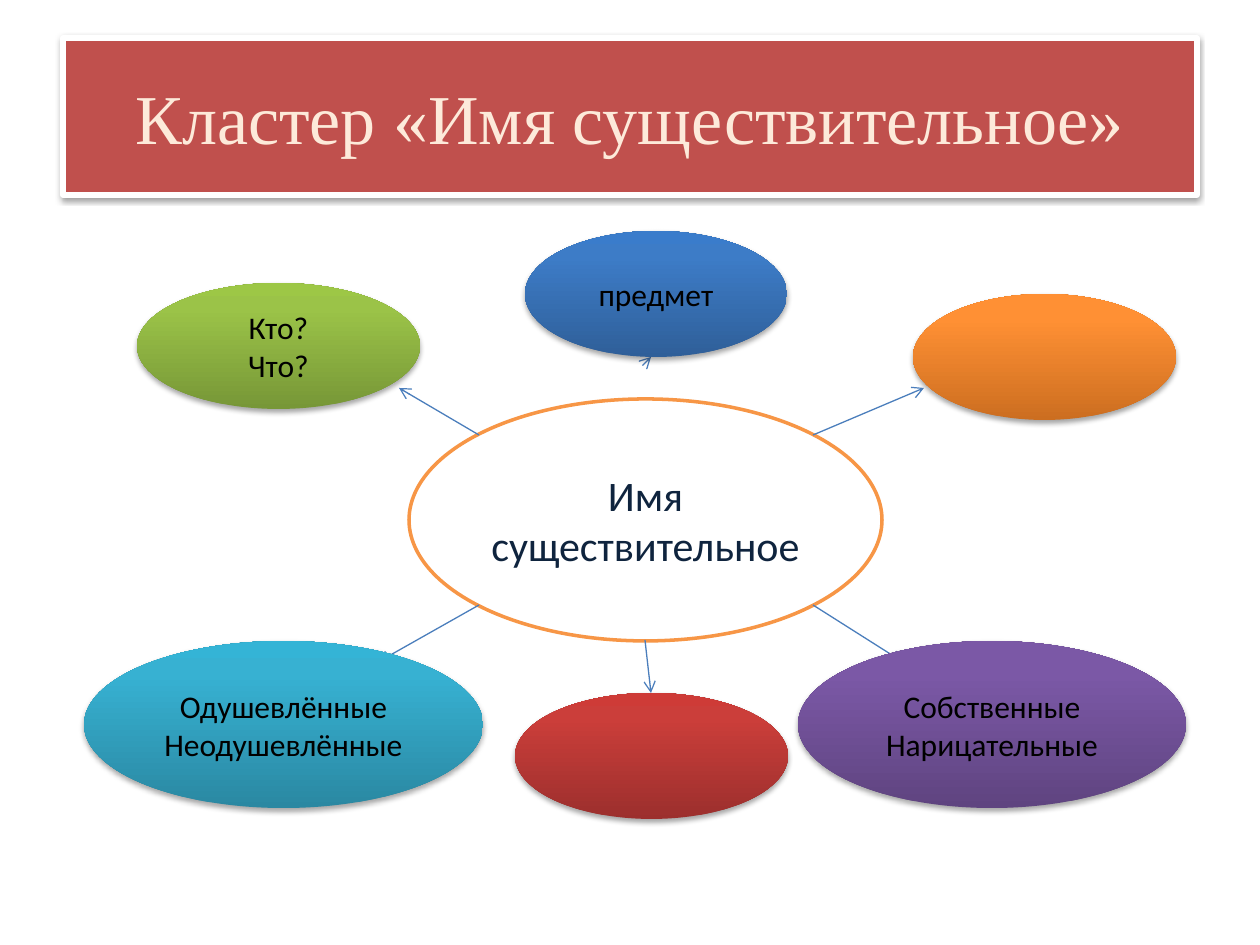
from lxml import etree
from pptx import Presentation
from pptx import util as u
from pptx.dml.color import RGBColor
from pptx.enum import shapes, text
from pptx.oxml import ns

COLOURS = {
    "banner": "C0504D", "banner_text": "FDEADA", "white": "FFFFFF",
    "hub_line": "F79646", "hub_text": "0F243E", "arrow": "4B7EBC", "black": "000000",
}
GRADIENTS = {
    "orange": ("CC6E20", "FF9034", "FF9136"),
    "blue": ("2F5F99", "3D7CC7", "3A7CCB"),
    "green": ("779737", "9BC348", "9DC746"),
    "teal": ("2A88A2", "37B1D2", "34B4D6"),
    "red": ("9C2F2D", "CB3E3A", "CE3B37"),
    "purple": ("5F4480", "7B58A6", "7C57A8"),
}
SPOKES = [
    ((813, 435), (924, 388)),
    ((479, 435), (399, 388)),
    ((813, 605), (903, 662)),
    ((479, 605), (378, 662)),
    ((650, 358), (651, 357)),
    ((645, 640), (651, 693)),
]
BUBBLES = [
    ((913, 294, 263, 126), "orange", []),
    ((525, 231, 262, 126), "blue", ["предмет"]),
    ((137, 283, 283, 126), "green", ["Кто?", "Что?"]),
    ((84, 641, 399, 167), "teal", ["Одушевлённые", "Неодушевлённые"]),
    ((515, 693, 273, 126), "red", []),
    ((798, 641, 388, 167), "purple", ["Собственные", "Нарицательные"]),
]


def add_node(parent, tag, **attributes):
    return etree.SubElement(parent, ns.qn(tag), {k: str(v) for k, v in attributes.items()})


class ClusterSlide:
    def __init__(self, width, height):
        self.scale = u.Inches(10) / width
        self.deck = Presentation()
        self.deck.slide_width, self.deck.slide_height = self.emu(width, height)
        self.slide = self.deck.slides.add_slide(self.deck.slide_layouts[5])

    def emu(self, *lengths):
        return [u.Emu(round(length * self.scale)) for length in lengths]

    def colour(self, name):
        return RGBColor.from_string(COLOURS[name])

    def fill(self, shape, name):
        shape.fill.solid()
        shape.fill.fore_color.rgb = self.colour(name)

    def outline(self, shape, name, points):
        shape.line.color.rgb = self.colour(name)
        shape.line.width = u.Pt(points)

    def add_lines(self, shape, lines, size, font, colour):
        frame = shape.text_frame
        frame.word_wrap = True
        frame.auto_size = text.MSO_AUTO_SIZE.NONE
        frame.vertical_anchor = text.MSO_ANCHOR.MIDDLE
        for index, line in enumerate(lines):
            paragraph = frame.add_paragraph() if index else frame.paragraphs[0]
            paragraph.alignment = text.PP_ALIGN.CENTER
            run = paragraph.add_run()
            run.text = line
            run.font.size = u.Pt(size)
            run.font.name = font
            run.font.color.rgb = self.colour(colour)

    def shadow(self, shape, distance, opacity):
        shape.shadow.inherit = False
        effects = shape._element.spPr.find(ns.qn("a:effectLst"))
        outer = add_node(effects, "a:outerShdw", blurRad=u.Pt(3.1), dist=u.Pt(distance),
                         dir=5400000, rotWithShape=0)
        black = add_node(outer, "a:srgbClr", val=COLOURS["black"])
        add_node(black, "a:alpha", val=opacity * 1000)

    def title(self, box, wording):
        banner = self.slide.shapes.title
        banner.left, banner.top, banner.width, banner.height = self.emu(*box)
        self.fill(banner, "banner")
        self.outline(banner, "white", 3)
        self.shadow(banner, 1.6, 38)
        self.add_lines(banner, [wording], 40, "Times New Roman", "banner_text")

    def ellipse(self, box):
        oval = self.slide.shapes.add_shape(shapes.MSO_SHAPE.OVAL, *self.emu(*box))
        oval.shadow.inherit = False
        return oval

    def hub(self, box, wording):
        centre = self.ellipse(box)
        self.fill(centre, "white")
        self.outline(centre, "hub_line", 2)
        self.add_lines(centre, [wording], 24, "Calibri", "hub_text")

    def bubble(self, box, gradient, lines):
        topic = self.ellipse(box)
        topic.line.fill.background()
        topic.fill.gradient()
        stops = topic._element.spPr.find(ns.qn("a:gradFill")).find(ns.qn("a:gsLst"))
        for stop in list(stops):
            stops.remove(stop)
        for position, shade in zip((0, 80, 100), GRADIENTS[gradient]):
            stop = add_node(stops, "a:gs", pos=position * 1000)
            add_node(stop, "a:srgbClr", val=shade)
        topic.fill.gradient_angle = 90
        self.shadow(topic, 1.8, 35)
        self.add_lines(topic, lines, 18, "Calibri", "black")

    def arrow(self, start, end):
        spoke = self.slide.shapes.add_connector(
            shapes.MSO_CONNECTOR.STRAIGHT, *self.emu(*start, *end))
        self.outline(spoke, "arrow", 0.75)
        properties = spoke._element.spPr
        add_node(properties.find(ns.qn("a:ln")), "a:tailEnd", type="arrow")
        add_node(properties, "a:effectLst")

    def save(self):
        self.deck.save("out.pptx")


def main():
    cluster = ClusterSlide(1260, 945)
    cluster.title((63, 38, 1134, 157), "Кластер «Имя существительное»")
    cluster.hub((409, 399, 473, 242), "Имя существительное")
    for start, end in SPOKES:
        cluster.arrow(start, end)
    for box, gradient, lines in BUBBLES:
        cluster.bubble(box, gradient, lines)
    cluster.save()


if __name__ == "__main__":
    main()
